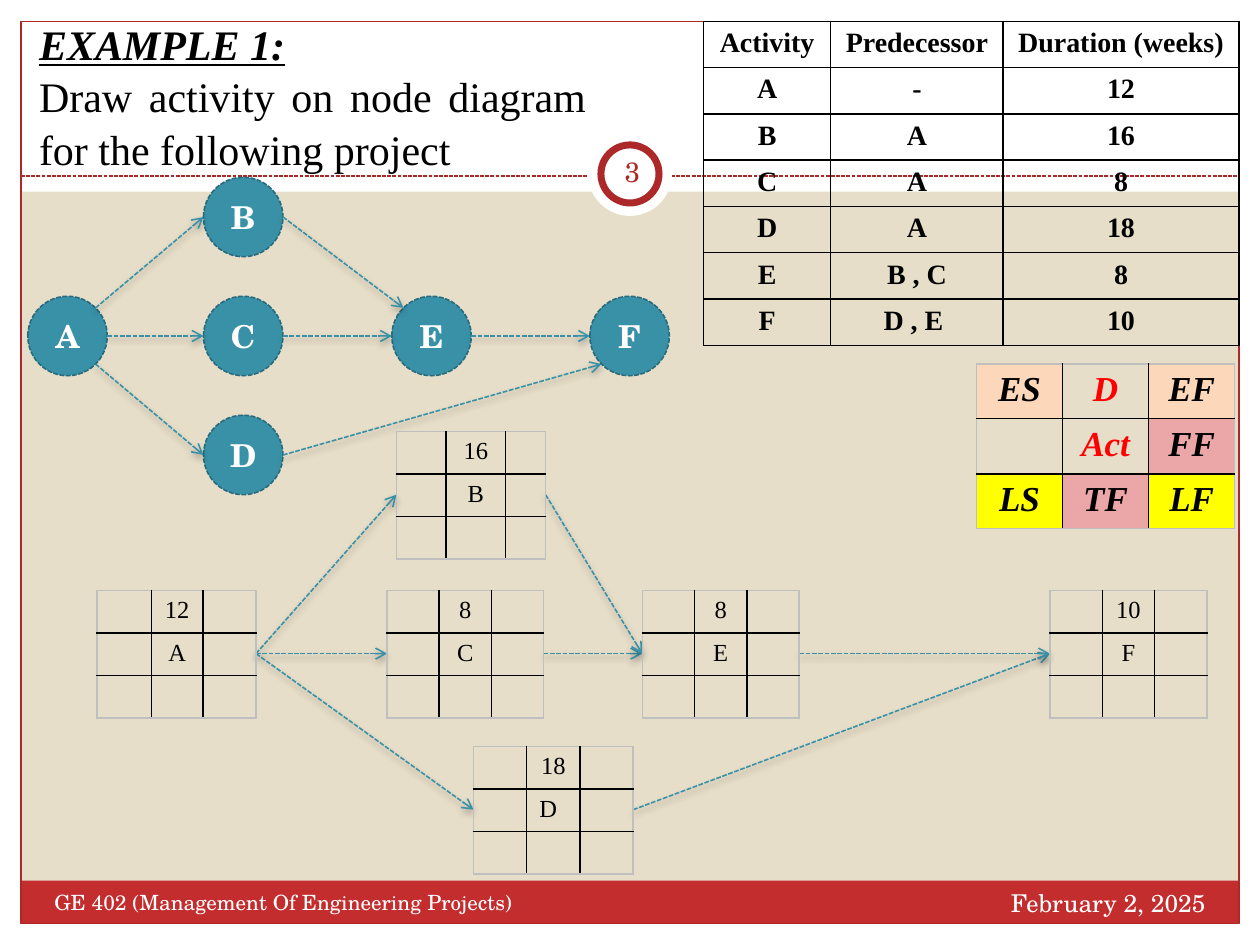
from math import cos, radians, sin

from lxml import etree
from pptx import Presentation
from pptx.dml.color import RGBColor
from pptx.enum import dml, shapes, text
from pptx.oxml import parse_xml
from pptx.oxml.ns import nsdecls, qn
from pptx.util import Pt

BEIGE = RGBColor(0xE7, 0xDE, 0xC9)
WHITE = RGBColor(0xFF, 0xFF, 0xFF)
BLACK = RGBColor(0x00, 0x00, 0x00)
GREY = RGBColor(0xBF, 0xBF, 0xBF)
RED = RGBColor(0xC3, 0x2D, 0x2E)
DARK_RED = RGBColor(0xAC, 0x28, 0x29)
BRIGHT_RED = RGBColor(0xFF, 0x00, 0x00)
TEAL = RGBColor(0x38, 0x91, 0xA7)
DARK_TEAL = RGBColor(0x29, 0x6B, 0x7C)
PEACH = RGBColor(0xFD, 0xD7, 0xBA)
PINK = RGBColor(0xEB, 0xA7, 0xA8)
YELLOW = RGBColor(0xFF, 0xFF, 0x00)

SERIF = "Times New Roman"
SCHOLA = "TeX Gyre Schola"
LEFT, CENTER, RIGHT, JUSTIFY = (
    text.PP_ALIGN.LEFT, text.PP_ALIGN.CENTER, text.PP_ALIGN.RIGHT, text.PP_ALIGN.JUSTIFY)
RECT, OVAL = shapes.MSO_SHAPE.RECTANGLE, shapes.MSO_SHAPE.OVAL

DIAMETER = 45.4
CIRCLES = {"A": (38.6, 192), "C": (139, 192), "E": (246.6, 192),
           "F": (359.8, 192), "B": (139, 124), "D": (139, 260)}
CIRCLE_LINKS = [("A", -45, "B", 180), ("A", 0, "C", 180), ("A", 45, "D", 180),
                ("B", 0, "E", 225), ("C", 0, "E", 180), ("D", 0, "F", 135),
                ("E", 0, "F", 180)]

BOX_ROW = 24
BOXES = {"A": (55.4, 337.5, (31.1, 29.6, 30.2), "12"),
         "B": (226.5, 246.7, (28.3, 34.2, 22.8), "16"),
         "C": (221.2, 337.5, (29.8, 29.8, 29.8), "8"),
         "D": (270.6, 426.7, (30.4, 30.4, 30.4), "18"),
         "E": (367, 337.5, (29.9, 29.9, 29.9), "8"),
         "F": (600, 337.5, (29.9, 29.9, 29.9), "10")}
BOX_LINKS = ["AB", "AC", "AD", "CE", "BE", "DF", "EF"]

ACTIVITIES = [("Activity", "Predecessor", "Duration (weeks)"),
              ("A", "-", "12"), ("B", "A", "16"), ("C", "A", "8"),
              ("D", "A", "18"), ("E", "B , C", "8"), ("F", "D , E ", "10")]
LEGEND = [("ES", "D", "EF"), ("", "Act", "FF"), ("LS", "TF", "LF")]
LEGEND_FILLS = {"ES": PEACH, "EF": PEACH, "FF": PINK, "TF": PINK,
                "LS": YELLOW, "LF": YELLOW}


def add_run(p, content, size, color, font=SERIF, bold=False, italic=False, underline=False):
    """Append one formatted run to a paragraph."""
    r = p.add_run()
    r.text = content
    f = r.font
    f.name, f.size, f.bold, f.italic, f.underline = font, Pt(size), bold, italic, underline
    f.color.rgb = color


def add_panel(slide, kind, x, y, w, h, fill=None, line=None, width=0.75):
    """Add a shadowless shape with an optional fill and outline."""
    sp = slide.shapes.add_shape(kind, Pt(x), Pt(y), Pt(w), Pt(h))
    sp.shadow.inherit = False
    for fmt, color in ((sp.fill, fill), (sp.line.fill, line)):
        if color is None:
            fmt.background()
        else:
            fmt.solid()
            fmt.fore_color.rgb = color
    if line is not None:
        sp.line.width = Pt(width)
    return sp


def add_line(slide, start, end, color, width, arrow=False):
    """Add a dashed line, with an arrowhead and soft shadow when arrow is set."""
    ln = slide.shapes.add_connector(
        shapes.MSO_CONNECTOR.STRAIGHT, *(Pt(v) for v in (*start, *end)))
    ln.line.color.rgb = color
    ln.line.width = Pt(width)
    ln.line.dash_style = dml.MSO_LINE.SQUARE_DOT
    effects = etree.SubElement(ln._element.spPr, qn("a:effectLst"))
    if arrow:
        etree.SubElement(ln.line._get_or_add_ln(), qn("a:tailEnd"), type="arrow")
        shadow = etree.SubElement(effects, qn("a:outerShdw"), blurRad=str(Pt(4)),
                                  dist=str(Pt(2)), dir="5400000", rotWithShape="0")
        tone = etree.SubElement(shadow, qn("a:srgbClr"), val=str(BLACK))
        etree.SubElement(tone, qn("a:alpha"), val="35000")


def add_label(slide, x, y, w, h, content, size, color, align):
    """Add a one-line text box in the theme typeface."""
    tf = slide.shapes.add_textbox(Pt(x), Pt(y), Pt(w), Pt(h)).text_frame
    tf.word_wrap = True
    tf.paragraphs[0].alignment = align
    add_run(tf.paragraphs[0], content, size, color, SCHOLA)
    return tf


def set_borders(cell, colors):
    """Draw the left, right, top and bottom borders of a cell."""
    tcPr = cell._tc.get_or_add_tcPr()
    for i, (side, color) in enumerate(zip("LRTB", colors)):
        tcPr.insert(i, parse_xml(
            f'<a:ln{side} {nsdecls("a")} w="{Pt(1)}"><a:solidFill>'
            f'<a:srgbClr val="{color}"/></a:solidFill></a:ln{side}>'))


def add_grid(slide, x, y, widths, row_height, rows, size, edge=GREY,
             bold=False, italic=False, style=None):
    """Add a ruled table; style maps (text, column) to fill, colour and alignment."""
    n, m = len(rows), len(widths)
    tbl = slide.shapes.add_table(
        n, m, Pt(x), Pt(y), Pt(sum(widths)), Pt(row_height * n)).table
    tbl.first_row = tbl.horz_banding = False
    for col, w in zip(tbl.columns, widths):
        col.width = Pt(w)
    for i, values in enumerate(rows):
        tbl.rows[i].height = Pt(row_height)
        for j, value in enumerate(values):
            fill, color, align = style(value, j) if style else (None, BLACK, CENTER)
            cell = tbl.cell(i, j)
            if fill is None:
                cell.fill.background()
            else:
                cell.fill.solid()
                cell.fill.fore_color.rgb = fill
            on_edge = (j == 0, j == m - 1, i == 0, i == n - 1)
            set_borders(cell, [edge if outer else BLACK for outer in on_edge])
            p = cell.text_frame.paragraphs[0]
            p.alignment = align
            if value:
                add_run(p, value, size, color, bold=bold, italic=italic)
            else:
                etree.SubElement(p._p, qn("a:endParaRPr"), sz=str(size * 100))


def add_frame(slide):
    """Draw the margins, footer bar, border and page number badge."""
    for box in ((0, 528, 720, 12), (0, 0, 720, 109.6), (0, 0, 12, 540), (708, 0, 12, 540)):
        add_panel(slide, RECT, *box, fill=WHITE)
    add_panel(slide, RECT, 11.8, 503.2, 695.6, 24.4, fill=RED)
    add_panel(slide, RECT, 12, 12.2, 696, 515.5, line=DARK_RED)
    add_line(slide, (12, 100.6), (708, 100.6), DARK_RED, 0.75)
    add_panel(slide, OVAL, 336, 75.4, 48, 48, fill=WHITE)
    add_panel(slide, OVAL, 343.4, 82.8, 33.2, 33.2, fill=WHITE, line=DARK_RED, width=4)
    add_label(slide, 456, 504, 240, 28.8, "February 2, 2025", 14, WHITE, RIGHT)
    add_label(slide, 24, 504.6, 282, 28.8,
              "GE 402 (Management Of Engineering Projects)", 12, WHITE, LEFT)
    tf = add_label(slide, 343.4, 80.8, 36, 34.6, "3", 16, DARK_RED, CENTER)
    tf.vertical_anchor = text.MSO_ANCHOR.MIDDLE
    tf.margin_left = tf.margin_right = Pt(3.6)


def add_title(slide):
    """Fill the title placeholder and bring it in front of the frame."""
    sp = slide.shapes.title
    sp.left, sp.top, sp.width, sp.height = Pt(15.1), Pt(5.8), Pt(327), Pt(94.4)
    slide.shapes._spTree.append(sp._element)
    tf = sp.text_frame
    tf.word_wrap = True
    tf.auto_size = text.MSO_AUTO_SIZE.NONE
    tf.vertical_anchor = text.MSO_ANCHOR.TOP
    head, task = tf.paragraphs[0], tf.add_paragraph()
    add_run(head, "EXAMPLE 1:", 24, BLACK, bold=True, italic=True, underline=True)
    add_run(task, "Draw activity on node diagram for the following project", 24, BLACK)
    for p in (head, task):
        p.alignment = JUSTIFY
        p.line_spacing = 1.04


def rim(name, angle):
    """Return the point on a circle's rim at a clockwise angle in degrees."""
    x, y = CIRCLES[name]
    a = radians(angle)
    return x + DIAMETER / 2 * cos(a), y + DIAMETER / 2 * sin(a)


def add_circles(slide):
    """Draw the circle network and its arrows."""
    for name, (x, y) in CIRCLES.items():
        sp = add_panel(slide, OVAL, x - DIAMETER / 2, y - DIAMETER / 2,
                       DIAMETER, DIAMETER, TEAL, DARK_TEAL, 0.9)
        sp.line.dash_style = dml.MSO_LINE.SQUARE_DOT
        tf = sp.text_frame
        tf.vertical_anchor = text.MSO_ANCHOR.MIDDLE
        tf.paragraphs[0].alignment = CENTER
        add_run(tf.paragraphs[0], name, 18, WHITE, SCHOLA, bold=True)
    for a, a_angle, b, b_angle in CIRCLE_LINKS:
        add_line(slide, rim(a, a_angle), rim(b, b_angle), TEAL, 0.9, arrow=True)


def box_style(value, column):
    """Return fill, colour and alignment for an activity box cell."""
    return BEIGE if column == 1 else None, BLACK, LEFT if value == "D" else CENTER


def legend_style(value, column):
    """Return fill, colour and alignment for a legend cell."""
    return LEGEND_FILLS.get(value), BRIGHT_RED if value in ("D", "Act") else BLACK, CENTER


def add_boxes(slide):
    """Draw the activity boxes and the arrows between their sides."""
    for a, b in BOX_LINKS:
        x, y, widths, _ = BOXES[a]
        end_x, end_y = BOXES[b][:2]
        middle = BOX_ROW * 1.5
        add_line(slide, (x + sum(widths), y + middle), (end_x, end_y + middle),
                 TEAL, 0.9, arrow=True)
    for name, (x, y, widths, weeks) in BOXES.items():
        rows = [("", weeks, ""), ("", name, ""), ("", "", "")]
        add_grid(slide, x, y, widths, BOX_ROW, rows, 14, style=box_style)


def main():
    """Build the slide and save it."""
    prs = Presentation()
    prs.slide_width, prs.slide_height = Pt(720), Pt(540)
    slide = prs.slides.add_slide(prs.slide_layouts[5])
    slide.background.fill.solid()
    slide.background.fill.fore_color.rgb = BEIGE
    add_frame(slide)
    add_title(slide)
    add_grid(slide, 402, 12.2, (72.7, 98.6, 134.6), 26.45, ACTIVITIES, 16, BLACK, bold=True)
    add_circles(slide)
    add_grid(slide, 558, 208, (49.2, 49.2, 49.2), 31.2, LEGEND, 20,
             bold=True, italic=True, style=legend_style)
    add_boxes(slide)
    prs.save("out.pptx")


if __name__ == "__main__":
    main()
